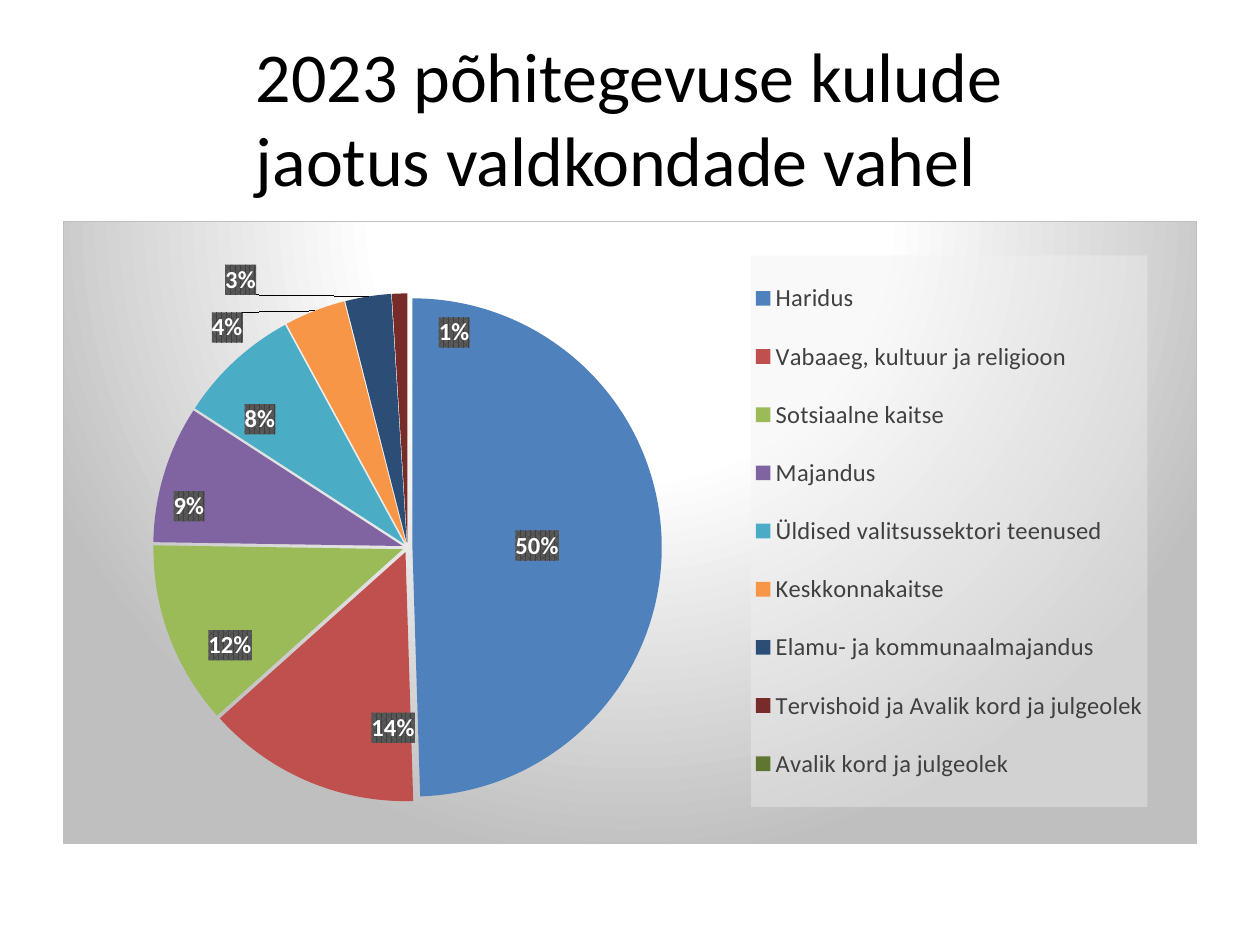
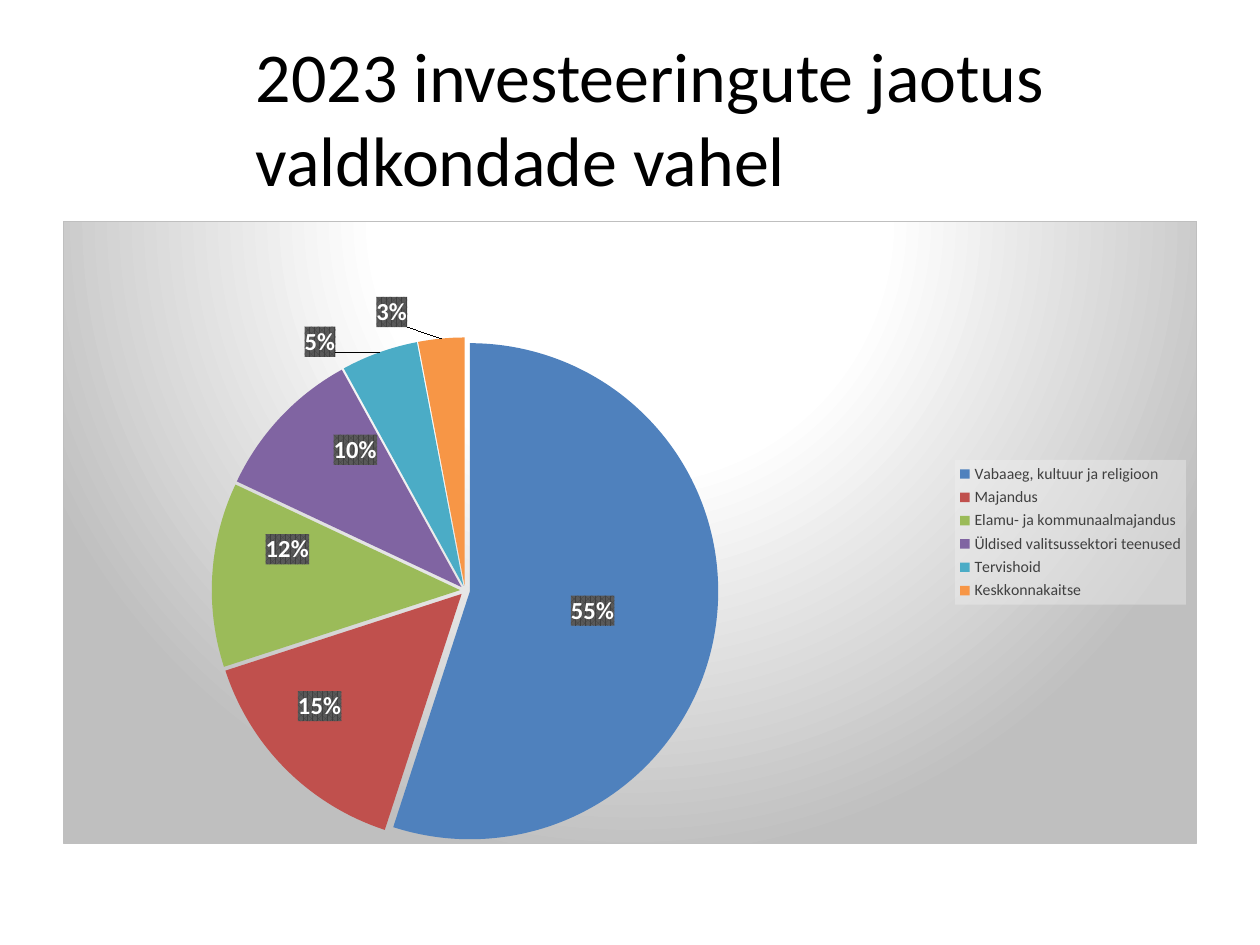
from copy import deepcopy
from lxml import etree
from pptx import Presentation
from pptx.chart.data import CategoryChartData as Data
from pptx.dml.color import RGBColor
from pptx.enum.chart import XL_CHART_TYPE as Kind, XL_LABEL_POSITION as Spot
from pptx.enum.chart import XL_LEGEND_POSITION as Side
from pptx.enum.text import MSO_ANCHOR as Anchor, MSO_AUTO_SIZE as Fit, PP_ALIGN as Align
from pptx.util import Pt

FACE = "Calibri"
TITLE = (139, 21.6, 545, 90)
CHART = (36, 126, 648, 356.4)
HUES = ["4F81BD", "C0504D", "9BBB59", "8064A2", "4BACC6",
        "F79646", "2C4D75", "772C2A", "5F7530"]
NS = ('xmlns:c="http://schemas.openxmlformats.org/drawingml/2006/chart" '
      'xmlns:a="http://schemas.openxmlformats.org/drawingml/2006/main"')
C = "{http://schemas.openxmlformats.org/drawingml/2006/chart}"


def tint(code):
    return RGBColor.from_string(code)


def style(font, size, color, bold=False):
    font.name, font.size, font.bold = FACE, Pt(size), bold
    font.color.rgb = tint(color)


def write(frame, text, size=40, color="000000", align=Align.LEFT):
    frame.word_wrap, frame.auto_size = True, Fit.NONE
    frame.vertical_anchor = Anchor.MIDDLE
    frame.text = text
    para = frame.paragraphs[0]
    para.alignment = align
    style(para.runs[0].font, size, color)


# Chart XML pieces
def node(tag, inner="", attrs=""):
    return etree.fromstring(f"<c:{tag} {NS} {attrs}>{inner}</c:{tag}>")


def paint(code, alpha=100):
    return f'<a:srgbClr val="{code}"><a:alpha val="{alpha * 1000}"/></a:srgbClr>'


def layout(box, modes):
    """Turn lengths in points into shares of the chart frame."""
    parts = "".join(f'<c:{m}Mode val="edge"/>' for m in modes)
    for key, size, whole in zip("xywh", box, CHART[2:] * 2):
        parts += f'<c:{key} val="{size / whole:.4f}"/>'
    return parts


def place(box, inner=False):
    target = '<c:layoutTarget val="inner"/>' if inner else ""
    return node("layout", f"<c:manualLayout>{target}{layout(box, 'xy')}</c:manualLayout>")


def shift(move):
    return node("layout", f"<c:manualLayout>{layout(move, '')}</c:manualLayout>")


# Grey glow behind the whole chart
def glow(chart):
    stops = "".join(f'<a:gs pos="{at * 1000}">{paint(hue)}</a:gs>'
                    for at, hue in ((0, "FFFFFF"), (39, "FFFFFF"), (100, "BFBFBF")))
    fill = (f'<a:gradFill><a:gsLst>{stops}</a:gsLst><a:path path="circle">'
            '<a:fillToRect l="50000" t="-80000" r="50000" b="180000"/></a:path></a:gradFill>')
    line = f'<a:ln w="{Pt(0.75)}"><a:solidFill>{paint("BFBFBF")}</a:solidFill></a:ln>'
    chart.element.find(C + "chart").addnext(node("spPr", fill + line))


# Percent labels, each moved from its slice's middle
def label(series, moves):
    tags = series.data_labels
    tags.show_percentage, tags.show_value = True, False
    tags.number_format, tags.number_format_is_linked = "0%", False
    tags.position = Spot.CENTER
    style(tags.font, 14, "FFFFFF", True)
    root = tags._element
    root.find(C + "txPr").addprevious(node("spPr", (
        f'<a:pattFill prst="pct75"><a:fgClr>{paint("404040")}</a:fgClr>'
        f'<a:bgClr>{paint("595959")}</a:bgClr></a:pattFill><a:ln><a:noFill/></a:ln>')))
    shared = [kid for kid in root if kid.tag != C + "showLeaderLines"]
    for i, move in enumerate(moves):
        tag = node("dLbl", f'<c:idx val="{i + 1}"/>')
        tag.append(shift(move))
        tag.extend(deepcopy(kid) for kid in shared)
        root.insert(i, tag)


def key(chart, size, box):
    chart.has_legend = True
    legend = chart.legend
    legend.position, legend.include_in_layout = Side.RIGHT, False
    style(legend.font, size, "404040")
    root = legend._element
    for old in root.findall(C + "layout"):
        root.remove(old)
    if box:
        root.find(C + "legendPos").addnext(place(box))
    root.find(C + "overlay").addnext(
        node("spPr", f'<a:solidFill>{paint("F2F2F2", 39)}</a:solidFill>'))


def pie(slide, box, shares, plot, moves, size, legend, legbox=None):
    data = Data()
    data.categories = list(shares)
    data.add_series("Series 1", list(shares.values()))
    chart = slide.shapes.add_chart(Kind.PIE, *map(Pt, box), data).chart
    chart.has_title = False
    style(chart.font, size, "000000")
    chart.plots[0].vary_by_categories = True
    series = chart.plots[0].series[0]
    for i, hue in zip(range(len(shares)), HUES):
        fill = series.points[i].format.fill
        fill.solid()
        fill.fore_color.rgb = tint(hue)
    series._element.find(C + "tx").addnext(node("explosion", attrs='val="2"'))
    label(series, moves)
    key(chart, legend, legbox)
    area = chart.element.find(f"{C}chart/{C}plotArea")
    for old in area.findall(C + "layout"):
        area.remove(old)
    area.insert(0, place(plot, True))
    glow(chart)


def page(deck, title, **parts):
    slide = deck.slides.add_slide(deck.slide_layouts[5])
    head = slide.shapes.title
    head.left, head.top, head.width, head.height = map(Pt, TITLE)
    write(head.text_frame, title)
    pie(slide, CHART, **parts)


def main():
    deck = Presentation()
    deck.slide_width, deck.slide_height = Pt(720), Pt(540)

    # Running costs
    page(deck, "2023 põhitegevuse kulude jaotus valdkondade vahel",
         shares={"Haridus": 50, "Vabaaeg, kultuur ja religioon": 14,
                 "Sotsiaalne kaitse": 12, "Majandus": 9,
                 "Üldised valitsussektori teenused": 8, "Keskkonnakaitse": 4,
                 "Elamu- ja kommunaalmajandus": 3,
                 "Tervishoid ja Avalik kord ja julgeolek": 1,
                 "Avalik kord ja julgeolek": None},
         plot=(51.2, 32.8, 291, 308.3),
         moves=[(21, 35), (-32, 30), (-54, -2), (-34, -19),
                (-76, -57), (-84, -80), (29, -49)],
         size=14, legend=14, legbox=(393.3, 19.6, 226.8, 315.8))

    # Investments
    page(deck, "2023 investeeringute jaotus valdkondade vahel",
         shares={"Vabaaeg, kultuur ja religioon": 55, "Majandus": 15,
                 "Elamu- ja kommunaalmajandus": 12,
                 "Üldised valitsussektori teenused": 10,
                 "Tervishoid": 5, "Keskkonnakaitse": 3},
         plot=(67.4, 80.2, 324.6, 289.8),
         moves=[(-31, 14), (-28, -19), (-9, -30), (-58, -73), (-35, -86)],
         size=10, legend=9)

    deck.save("out.pptx")


if __name__ == "__main__":
    main()
